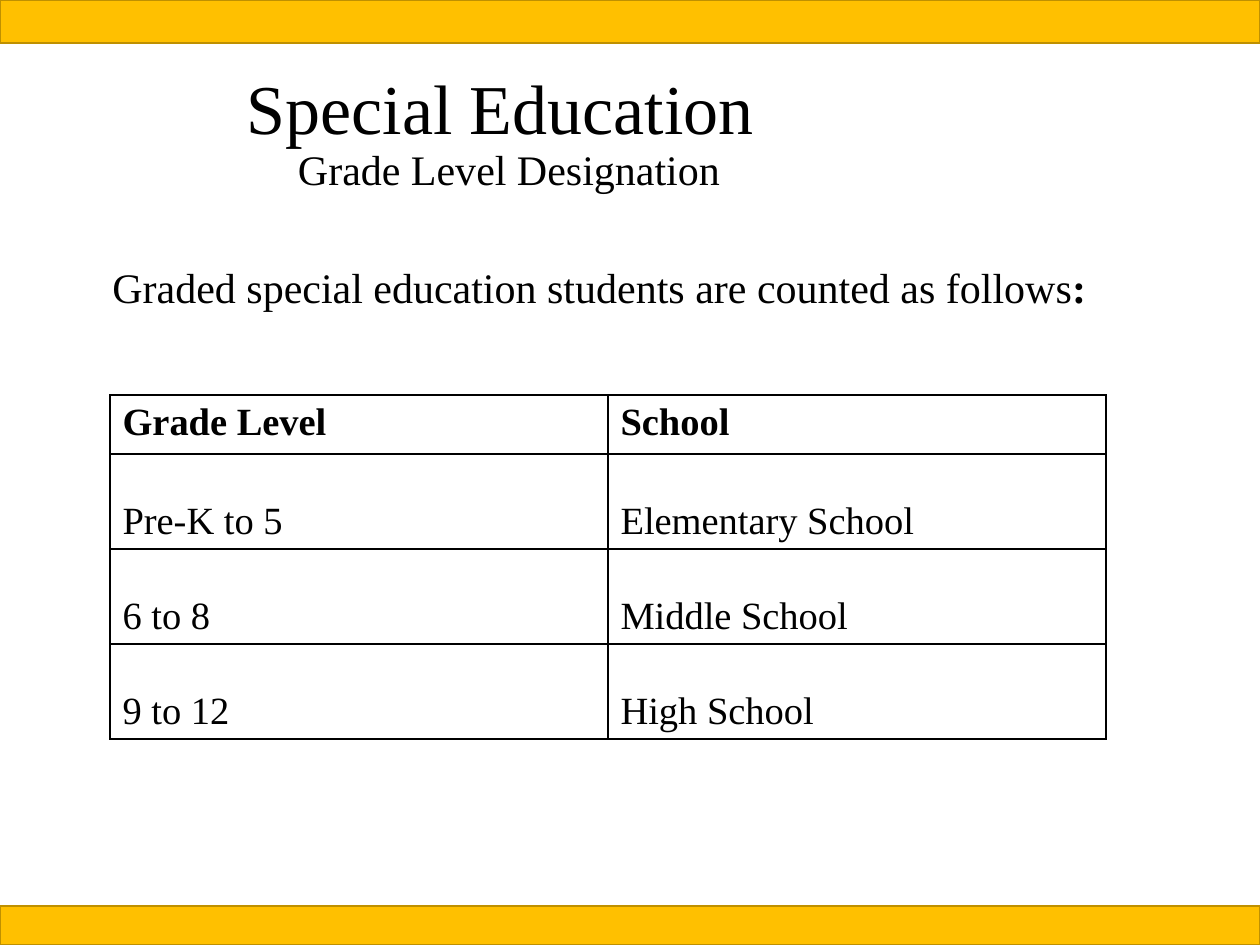
from lxml import etree
from pptx import Presentation
from pptx.dml.color import RGBColor
from pptx.enum import shapes, text
from pptx.oxml.ns import qn
from pptx.util import Emu, Pt

# Content
TITLE = "Special Education "
SUBTITLE = "Grade Level Designation"
INTRO = "Graded special education students are counted as follows"
ROWS = [
    ("Grade Level", "School"),
    ("Pre-K to 5", "Elementary School"),
    ("6 to 8", "Middle School"),
    ("9 to 12", "High School"),
]
BANDS = [(0, 43), (906, 39)]  # top, height
WIDTH, HEIGHT = 1260, 945
HEADER_H, ROW_H, COL_W = 59, 95, 498
BLACK, GOLD, DARK_GOLD = "000000", "FFC000", "BF9000"


def px(n):
    return Emu(round(n * 914400 / 126))


def rgb(value):
    return RGBColor.from_string(value)


def add_text(p, content, size=24, bold=False, color=BLACK):
    r = p.add_run()
    r.text = content
    r.font.name = "Times New Roman"
    r.font.size = Pt(size)
    r.font.bold = bold
    r.font.color.rgb = rgb(color)


def add_borders(cell, color=BLACK):
    props = cell._tc.get_or_add_tcPr()
    for i, side in enumerate(("lnL", "lnR", "lnT", "lnB")):
        line = etree.Element(qn(f"a:{side}"), w=str(Pt(1)))
        fill = etree.SubElement(line, qn("a:solidFill"))
        etree.SubElement(fill, qn("a:srgbClr"), val=color)
        props.insert(i, line)


prs = Presentation()
prs.slide_width, prs.slide_height = px(WIDTH), px(HEIGHT)
slide = prs.slides.add_slide(prs.slide_layouts[5])

# Gold bands
for top, height in BANDS:
    sp = slide.shapes.add_shape(shapes.MSO_SHAPE.RECTANGLE,
                                0, px(top), px(WIDTH), px(height))
    sp.shadow.inherit = False
    sp.fill.solid()
    sp.fill.fore_color.rgb = rgb(GOLD)
    sp.line.color.rgb = rgb(DARK_GOLD)
    sp.line.width = Pt(1)

# Title
title = slide.shapes.title
title.left, title.top, title.width, title.height = map(px, (24, 43, 970, 183))
tf = title.text_frame
tf.vertical_anchor = text.MSO_ANCHOR.MIDDLE
p = tf.paragraphs[0]
p.alignment = text.PP_ALIGN.CENTER
p.line_spacing = 0.9
add_text(p, TITLE, size=40)
p.add_line_break()
add_text(p, SUBTITLE)

# Introduction
tf = slide.shapes.add_textbox(px(100), px(252), px(1040), px(165)).text_frame
tf.word_wrap = True
tf.margin_top = px(10)
p = tf.paragraphs[0]
p.alignment = text.PP_ALIGN.JUSTIFY
add_text(p, INTRO)
add_text(p, ":", bold=True)

# Grade table
table_h = HEADER_H + ROW_H * (len(ROWS) - 1)
table = slide.shapes.add_table(len(ROWS), 2, px(110), px(395),
                               px(2 * COL_W), px(table_h)).table
table.first_row = table.horz_banding = False
for col in table.columns:
    col.width = px(COL_W)
for i, values in enumerate(ROWS):
    header = i == 0
    table.rows[i].height = px(HEADER_H if header else ROW_H)
    for j, value in enumerate(values):
        cell = table.cell(i, j)
        cell.fill.background()
        cell.vertical_anchor = text.MSO_ANCHOR.TOP if header else text.MSO_ANCHOR.BOTTOM
        add_text(cell.text_frame.paragraphs[0], value, size=22, bold=header)
        add_borders(cell)

prs.save("out.pptx")
